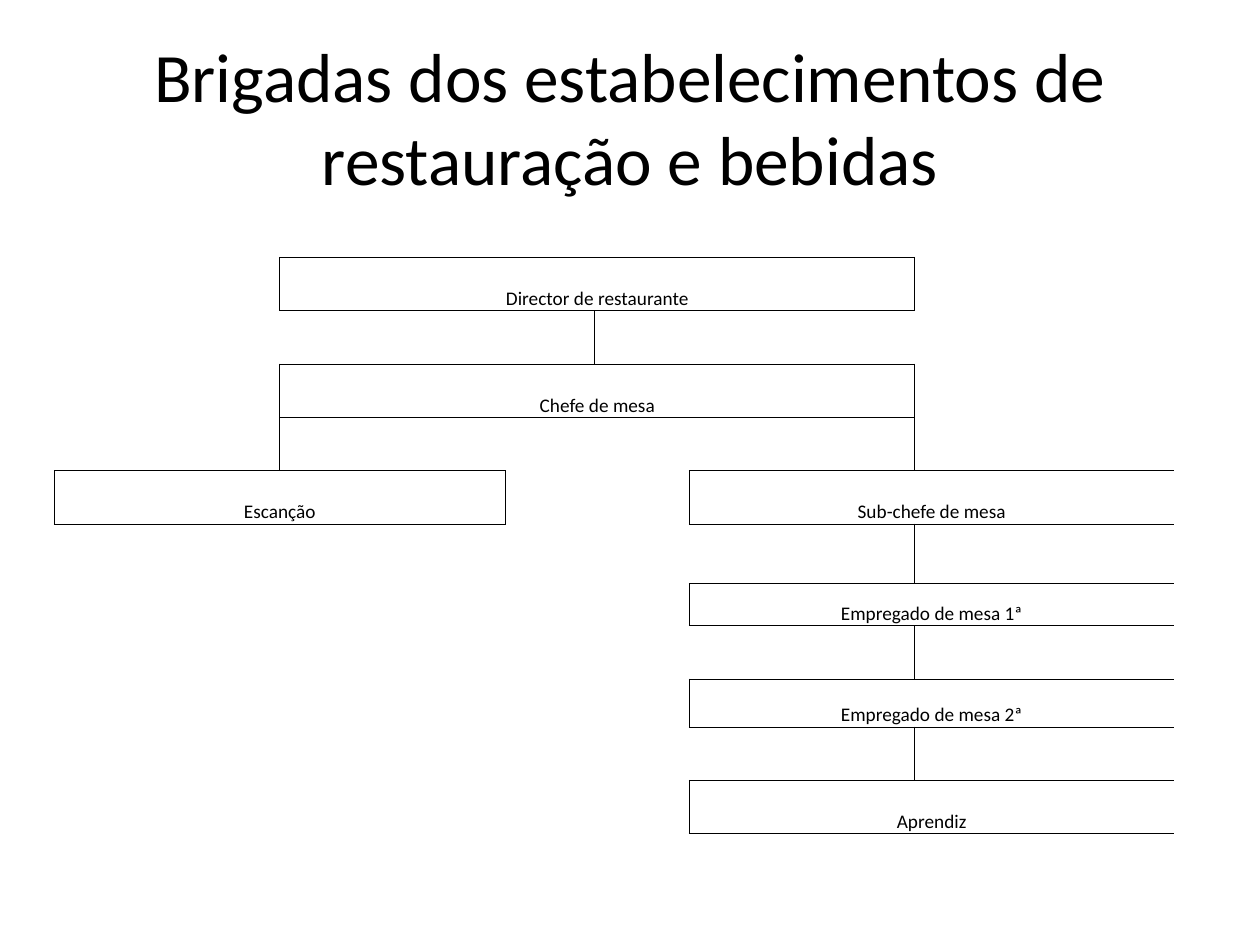
from collections import defaultdict
from dataclasses import dataclass

from lxml import etree
from pptx import Presentation
from pptx.dml.color import RGBColor
from pptx.enum.text import MSO_ANCHOR, PP_ALIGN
from pptx.oxml.ns import qn
from pptx.util import Pt

CENTER = PP_ALIGN.CENTER
MIDDLE, BOTTOM = MSO_ANCHOR.MIDDLE, MSO_ANCHOR.BOTTOM


@dataclass(frozen=True)
class Theme:
    """Colours, font and type sizes of the slide."""
    ink: str = "000000"
    font: str = "Calibri"
    title_size: float = 39.6
    label_size: float = 11
    line_width: float = 0.5


THEME = Theme()
TITLE = "Brigadas dos estabelecimentos de restauração e bebidas"
TITLE_BOX = (0, 21.6, 720, 90)
CHART_BOX = (31, 116.6, 640, 360.1)
COLUMN_WIDTHS = (128.9, 128.9, 51.1, 54, 128.9, 148.2)
ROW_HEIGHTS = (30.5,) * 6 + (34, 24.2, 30.5, 27.4, 30.5, 30.5)
POSITIONS = (
    (1, 1, 4, "Director de restaurante"),
    (3, 1, 4, "Chefe de mesa"),
    (5, 0, 1, "Escanção"),
    (5, 4, 5, "Sub-chefe de mesa"),
    (7, 4, 5, "Empregado de mesa 1ª"),
    (9, 4, 5, "Empregado de mesa 2ª"),
    (11, 4, 5, "Aprendiz"),
)
STEMS = ((2, 2), (4, 0), (4, 4), (6, 4), (8, 4), (10, 4))
SIDES = {"L": (0, -1, "R"), "R": (0, 1, "L"), "T": (-1, 0, "B"), "B": (1, 0, "T")}


def set_attributes(target, values):
    """Set each attribute of the target from a dict."""
    for name, value in values.items():
        setattr(target, name, value)


def write_centered(text_frame, text, size):
    """Write one centred paragraph in the theme font."""
    paragraph = text_frame.paragraphs[0]
    paragraph.alignment = CENTER
    run = paragraph.add_run()
    run.text = text
    set_attributes(run.font, {"name": THEME.font, "size": Pt(size), "bold": False})
    run.font.color.rgb = RGBColor.from_string(THEME.ink)


def add_title(slide, box):
    """Place the slide title in the given box."""
    shape = slide.shapes.add_textbox(*map(Pt, box))
    set_attributes(shape.text_frame, {"word_wrap": True, "vertical_anchor": MIDDLE})
    write_centered(shape.text_frame, TITLE, THEME.title_size)


def collect_edges():
    """Return the ruled sides of each cell, shared with its neighbours."""
    edges = defaultdict(set)

    def rule(row, column, side):
        """Rule one side of a cell and the matching side next to it."""
        row_step, column_step, opposite = SIDES[side]
        edges[row, column].add(side)
        edges[row + row_step, column + column_step].add(opposite)

    for row, first, last, _ in POSITIONS:
        rule(row, first, "L")
        rule(row, last, "R")
        for column in range(first, last + 1):
            rule(row, column, "T")
            rule(row, column, "B")
    for row, column in STEMS:
        rule(row, column, "R")
    return edges


def set_borders(cell, ruled):
    """Draw the ruled sides of a cell and clear the others."""
    properties = cell._tc.get_or_add_tcPr()
    for index, side in enumerate(SIDES):
        line = etree.Element(qn(f"a:ln{side}"), w=str(Pt(THEME.line_width)))
        if side in ruled:
            fill = etree.SubElement(line, qn("a:solidFill"))
            etree.SubElement(fill, qn("a:srgbClr"), val=THEME.ink)
        else:
            etree.SubElement(line, qn("a:noFill"))
        properties.insert(index, line)


def add_hierarchy(slide, box):
    """Place the staff hierarchy as a ruled table in the given box."""
    frame = slide.shapes.add_table(len(ROW_HEIGHTS), len(COLUMN_WIDTHS), *map(Pt, box))
    table = frame.table
    set_attributes(table, {"first_row": False, "horz_banding": False})
    for column, width in zip(table.columns, COLUMN_WIDTHS):
        column.width = Pt(width)
    for row, height in zip(table.rows, ROW_HEIGHTS):
        row.height = Pt(height)

    edges = collect_edges()
    cell_format = {
        "margin_left": Pt(0.7), "margin_right": Pt(0.7), "margin_top": Pt(0.7),
        "margin_bottom": 0, "vertical_anchor": BOTTOM,
    }
    for row in range(len(ROW_HEIGHTS)):
        for column in range(len(COLUMN_WIDTHS)):
            cell = table.cell(row, column)
            set_attributes(cell, cell_format)
            cell.fill.background()
            set_borders(cell, edges[row, column])
    for row, first, last, label in POSITIONS:
        cell = table.cell(row, first)
        cell.merge(table.cell(row, last))
        write_centered(cell.text_frame, label, THEME.label_size)


def main():
    """Build and save the presentation."""
    presentation = Presentation()
    set_attributes(presentation, {"slide_width": Pt(720), "slide_height": Pt(540)})
    slide = presentation.slides.add_slide(presentation.slide_layouts[6])
    add_title(slide, TITLE_BOX)
    add_hierarchy(slide, CHART_BOX)
    presentation.save("out.pptx")


if __name__ == "__main__":
    main()
